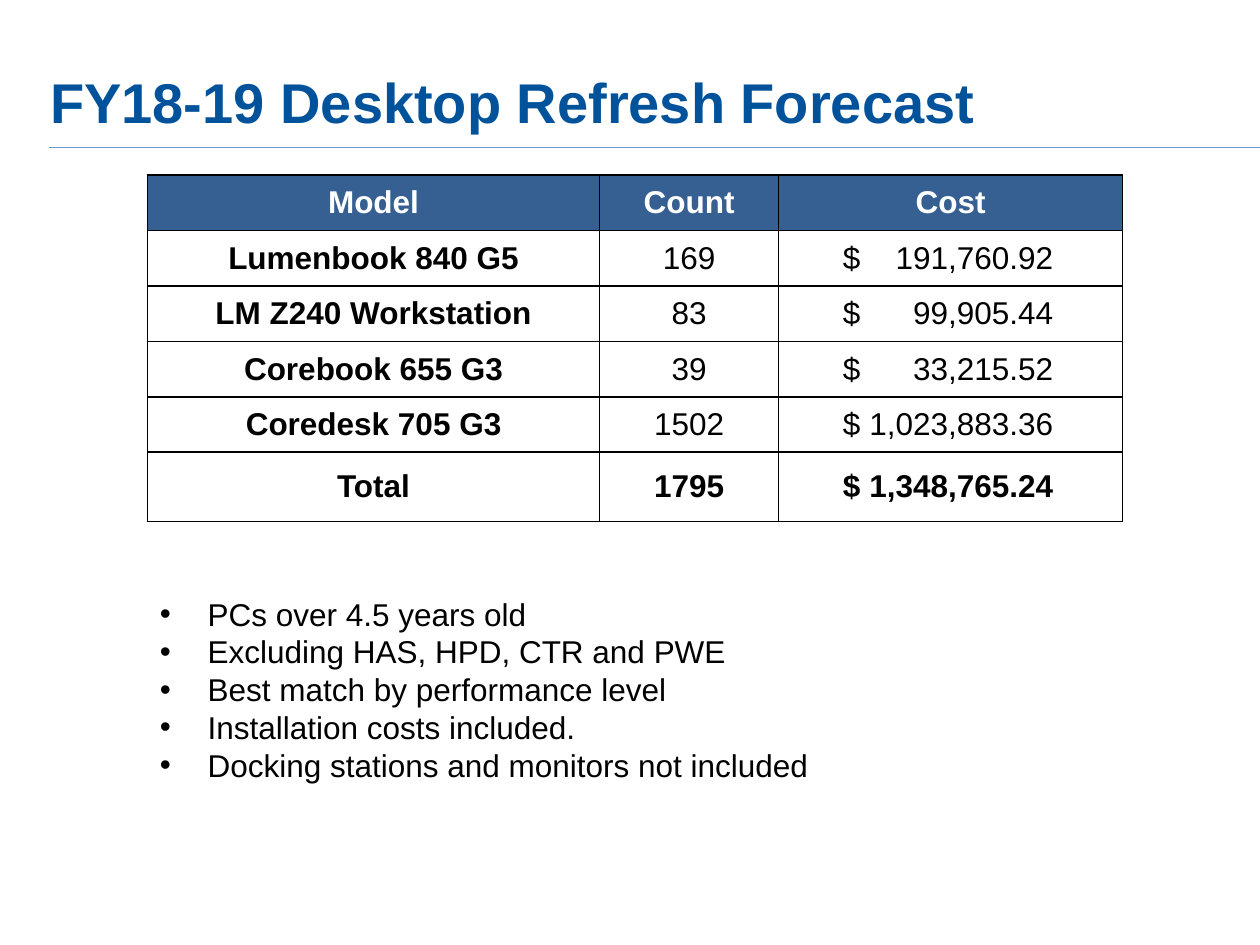
from lxml import etree
from pptx import Presentation
from pptx.dml.color import RGBColor
from pptx.enum.shapes import MSO_CONNECTOR
from pptx.enum.text import MSO_ANCHOR, PP_ALIGN
from pptx.oxml.ns import qn
from pptx.util import Inches, Pt

STRAIGHT = MSO_CONNECTOR.STRAIGHT
MIDDLE, BOTTOM = MSO_ANCHOR.MIDDLE, MSO_ANCHOR.BOTTOM
LEFT, CENTER = PP_ALIGN.LEFT, PP_ALIGN.CENTER

PAGE_WIDTH, PAGE_HEIGHT = 10, 7.5
CONTENT_LEFT, CONTENT_WIDTH = 1.17, 7.74
FONT = "Arial"
TITLE_BLUE, RULE_BLUE, HEADER_BLUE = "00529B", "6E96D5", "376092"
BLACK, WHITE = "000000", "FFFFFF"

COLUMN_WIDTHS = [3.59, 1.42, 2.73]
ROW_HEIGHTS = [0.44] * 5 + [0.55]
SIDE_MARGIN, COST_MARGIN, COST_TAB = 0.07, 0.51, 1.67
BULLET_INDENT = 0.38

FORECAST = [
    ("Model", "Count", "Cost"),
    ("Lumenbook 840 G5", "169", "$\t191,760.92"),
    ("LM Z240 Workstation", "83", "$\t99,905.44"),
    ("Corebook 655 G3", "39", "$\t33,215.52"),
    ("Coredesk 705 G3", "1502", "$\t1,023,883.36"),
    ("Total", "1795", "$\t1,348,765.24"),
]
NOTES = [
    "PCs over 4.5 years old",
    "Excluding HAS, HPD, CTR and PWE",
    "Best match by performance level",
    "Installation costs included.",
    "Docking stations and monitors not included",
]


def color(value):
    return RGBColor.from_string(value)


def add_element(parent, tag, **attributes):
    element = etree.SubElement(parent, qn(tag))
    for name, value in attributes.items():
        element.set(name, str(value))
    return element


def write(para, text, size=18, ink=BLACK, bold=False, align=LEFT, spacing=None):
    para.alignment = align
    if spacing:
        para.line_spacing = spacing
    span = para.add_run()
    span.text = text
    span.font.name = FONT
    span.font.size = Pt(size)
    span.font.bold = bold
    span.font.color.rgb = color(ink)


def add_text_frame(page, left, top, width, height):
    box = page.shapes.add_textbox(*map(Inches, (left, top, width, height)))
    box.text_frame.word_wrap = True
    return box.text_frame


def add_title(page, left, top, width, height):
    frame = add_text_frame(page, left, top, width, height)
    frame.vertical_anchor = BOTTOM
    frame.margin_top = frame.margin_bottom = Inches(0.1)
    write(frame.paragraphs[0], "FY18-19 Desktop Refresh Forecast",
          size=32, ink=TITLE_BLUE, bold=True, spacing=0.9)


def add_rule(page, left, top, right):
    rule = page.shapes.add_connector(
        STRAIGHT, Inches(left), Inches(top), Inches(right), Inches(top))
    rule.line.color.rgb = color(RULE_BLUE)
    rule.line.width = Pt(1)
    add_element(rule._element.spPr, "a:effectLst")


def add_borders(cell):
    properties = cell._tc.get_or_add_tcPr()
    for side in "LRTB":
        border = add_element(properties, f"a:ln{side}", w=Pt(1))
        fill = add_element(border, "a:solidFill")
        add_element(fill, "a:srgbClr", val=BLACK)


def format_cell(cell, text, header, bold):
    add_borders(cell)
    cell.vertical_anchor = MIDDLE
    cell.margin_top = cell.margin_bottom = 0
    cell.margin_left = cell.margin_right = Inches(SIDE_MARGIN)
    if header:
        cell.fill.solid()
        cell.fill.fore_color.rgb = color(HEADER_BLUE)
    else:
        cell.fill.background()
    para = cell.text_frame.paragraphs[0]
    amount = "\t" in text
    write(para, text, ink=WHITE if header else BLACK, bold=bold,
          align=LEFT if amount else CENTER)
    if amount:
        cell.margin_left = Inches(COST_MARGIN)
        stops = add_element(para._p.get_or_add_pPr(), "a:tabLst")
        add_element(stops, "a:tab", pos=Inches(COST_TAB), algn="r")


def add_forecast(page, left, top, width, height):
    table = page.shapes.add_table(
        len(FORECAST), len(COLUMN_WIDTHS),
        *map(Inches, (left, top, width, height))).table
    table.first_row = table.horz_banding = False
    for column, share in zip(table.columns, COLUMN_WIDTHS):
        column.width = Inches(width * share / sum(COLUMN_WIDTHS))
    for row, share in zip(table.rows, ROW_HEIGHTS):
        row.height = Inches(height * share / sum(ROW_HEIGHTS))
    last = len(FORECAST) - 1
    for row, values in enumerate(FORECAST):
        for column, text in enumerate(values):
            bold = row in (0, last) or column == 0
            format_cell(table.cell(row, column), text, row == 0, bold)


def add_notes_list(page, left, top, width, height):
    frame = add_text_frame(page, left, top, width, height)
    for index, note in enumerate(NOTES):
        para = frame.add_paragraph() if index else frame.paragraphs[0]
        write(para, note)
        properties = para._p.get_or_add_pPr()
        properties.set("marL", str(Inches(BULLET_INDENT)))
        properties.set("indent", str(-Inches(BULLET_INDENT)))
        add_element(properties, "a:buFont", typeface=FONT)
        add_element(properties, "a:buChar", char="•")


def main():
    deck = Presentation()
    deck.slide_width, deck.slide_height = Inches(PAGE_WIDTH), Inches(PAGE_HEIGHT)
    page = deck.slides.add_slide(deck.slide_layouts[6])
    add_rule(page, 0.39, 1.17, PAGE_WIDTH)
    add_title(page, 0.3, 0.21, 9.15, 0.97)
    add_forecast(page, CONTENT_LEFT, 1.39, CONTENT_WIDTH, sum(ROW_HEIGHTS))
    add_notes_list(page, CONTENT_LEFT, 4.67, CONTENT_WIDTH, 1.62)
    deck.save("out.pptx")


if __name__ == "__main__":
    main()
